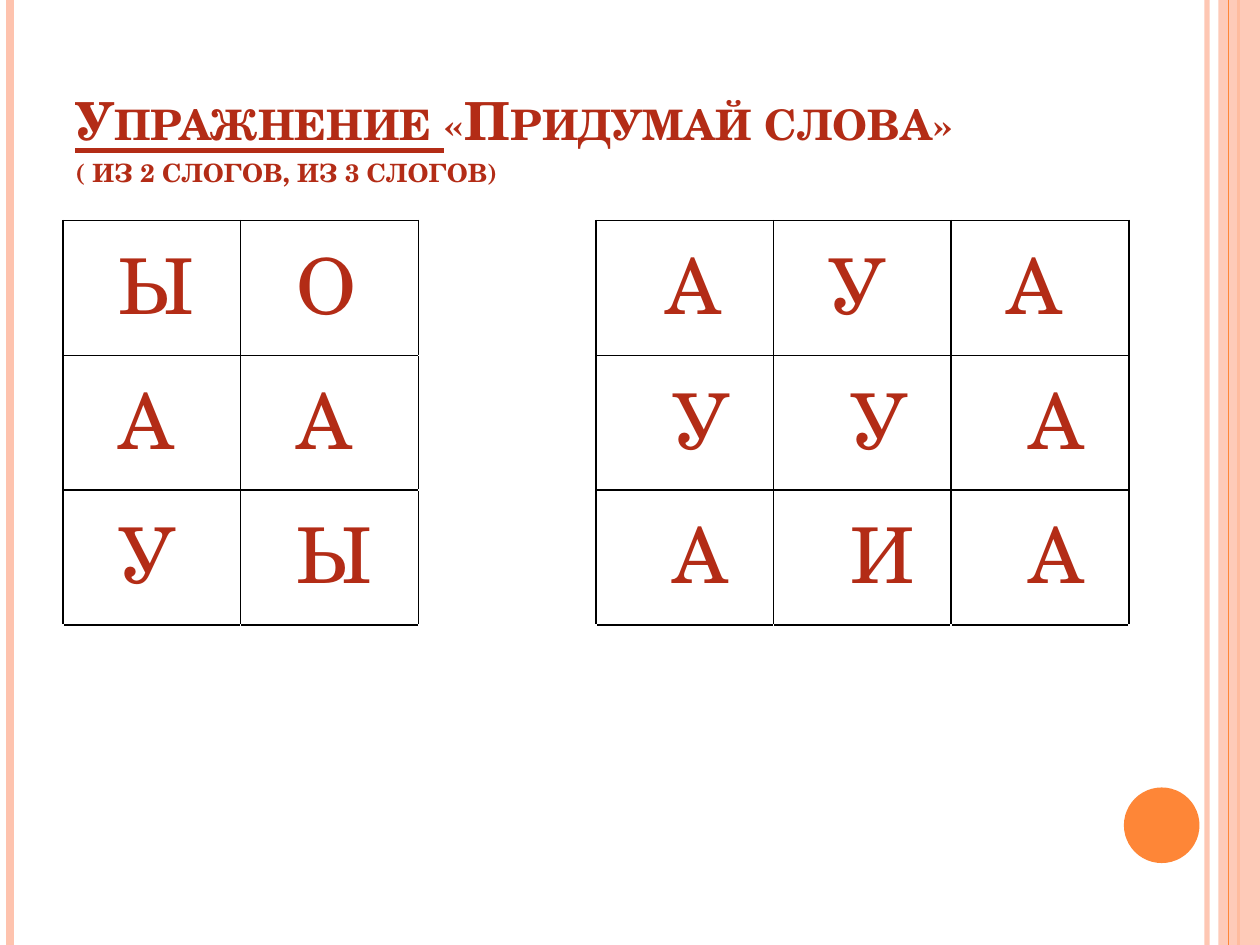
from lxml import etree
from pptx import Presentation
from pptx.dml.color import RGBColor
from pptx.enum.shapes import MSO_CONNECTOR, MSO_SHAPE
from pptx.enum.text import MSO_ANCHOR
from pptx.oxml import parse_xml
from pptx.oxml.ns import nsdecls, qn
from pptx.util import Inches, Pt

STRAIGHT = MSO_CONNECTOR.STRAIGHT
RECTANGLE, OVAL = MSO_SHAPE.RECTANGLE, MSO_SHAPE.OVAL
BOTTOM = MSO_ANCHOR.BOTTOM

WIDTH, HEIGHT = 10, 7.5
FONT = "TeX Gyre Schola"
RED, ORANGE, PEACH, BLACK = "B32C16", "FE8637", "FEC3AE", "000000"

GRID_LEFT, GRID_TOP = 0.5, 1.75
COLUMN, ROW = 1.41, 1.07
NARROW, MIDDLE, WIDE = 0.44, 0.55, 0.61  # letter indents inside a cell
GAP_COLUMN = 2
LETTERS = ["ЫО АУА", "АА УУА", "УЫ АИА", " " * 6]
INDENTS = [
    [NARROW, NARROW, NARROW, MIDDLE, NARROW, NARROW],
    [NARROW, NARROW, NARROW, WIDE, WIDE, WIDE],
    [NARROW, NARROW, NARROW, WIDE, WIDE, WIDE],
]


def color(hex_text):
    return RGBColor.from_string(hex_text)


def set_opacity(element, percent):
    for tone in element.iter(qn("a:srgbClr")):
        etree.SubElement(tone, qn("a:alpha"), val=str(percent * 1000))


def add_stripe(page, x, hex_text, points, opacity=100):
    """Draw a vertical line over the full height of the slide."""
    stripe = page.shapes.add_connector(
        STRAIGHT, Inches(x), 0, Inches(x), Inches(HEIGHT))
    stripe.line.color.rgb = color(hex_text)
    stripe.line.width = Pt(points)
    properties = stripe.element.spPr
    if opacity < 100:
        set_opacity(properties, opacity)
    etree.SubElement(properties, qn("a:effectLst"))


def add_solid(page, kind, place, hex_text, opacity=100):
    solid = page.shapes.add_shape(kind, *map(Inches, place))
    solid.shadow.inherit = False
    solid.fill.solid()
    solid.fill.fore_color.rgb = color(hex_text)
    solid.line.fill.background()
    if opacity < 100:
        set_opacity(solid.element.spPr, opacity)


def style_span(span, size):
    span.font.name = FONT
    span.font.size = Pt(size)
    span.font.color.rgb = color(RED)


def add_title(page):
    box = page.shapes.add_textbox(*map(Inches, (0.5, 0.3, 8.17, 1.25)))
    frame = box.text_frame
    frame.word_wrap = True
    frame.vertical_anchor = BOTTOM
    para = frame.paragraphs[0]
    para.text = "Упражнение "
    para.add_run().text = "«Придумай слова»"
    para.add_line_break()
    para.add_run().text = "( из 2 слогов, из 3 слогов)"
    for span, size in zip(para.runs, (30, 30, 18)):
        style_span(span, size)
        span.font.bold = True
        span.font._element.set("cap", "small")
    para.runs[0].font.underline = True


def add_border(cell, side):
    cell._tc.get_or_add_tcPr().append(parse_xml(
        f'<a:ln{side} {nsdecls("a")} w="{Pt(1)}"><a:solidFill>'
        f'<a:srgbClr val="{BLACK}"/></a:solidFill></a:ln{side}>'))


def border_sides(row, column):
    """Sides to draw: the gap column and the last row stay open."""
    last = row == len(LETTERS) - 1
    if column == GAP_COLUMN:
        return "" if last else "LR"
    return "T" if last else "LRTB"


def add_letter_table(page):
    rows, columns = len(LETTERS), len(LETTERS[0])
    table = page.shapes.add_table(
        rows, columns, Inches(GRID_LEFT), Inches(GRID_TOP),
        Inches(columns * COLUMN), Inches(rows * ROW)).table
    table.first_row = table.horz_banding = False
    for r, letters in enumerate(LETTERS):
        for c, letter in enumerate(letters):
            cell = table.cell(r, c)
            for side in border_sides(r, c):
                add_border(cell, side)
            cell.fill.background()
            if letter != " ":
                cell.margin_left = Inches(INDENTS[r][c])
                cell.text_frame.text = letter
                style_span(cell.text_frame.paragraphs[0].runs[0], 44)


def main():
    deck = Presentation()
    deck.slide_width, deck.slide_height = Inches(WIDTH), Inches(HEIGHT)
    page = deck.slides.add_slide(deck.slide_layouts[6])
    add_stripe(page, 9.58, PEACH, 3, opacity=93)
    add_stripe(page, 0.08, PEACH, 4.5)
    add_stripe(page, 9.83, ORANGE, 1.5)
    add_solid(page, RECTANGLE, (9.67, 0, 0.33, HEIGHT), PEACH, opacity=87)
    add_stripe(page, 9.75, ORANGE, 0.75)
    add_solid(page, OVAL, (8.92, 6.25, 0.6, 0.6), ORANGE)
    add_title(page)
    add_letter_table(page)
    deck.save("out.pptx")


if __name__ == "__main__":
    main()
